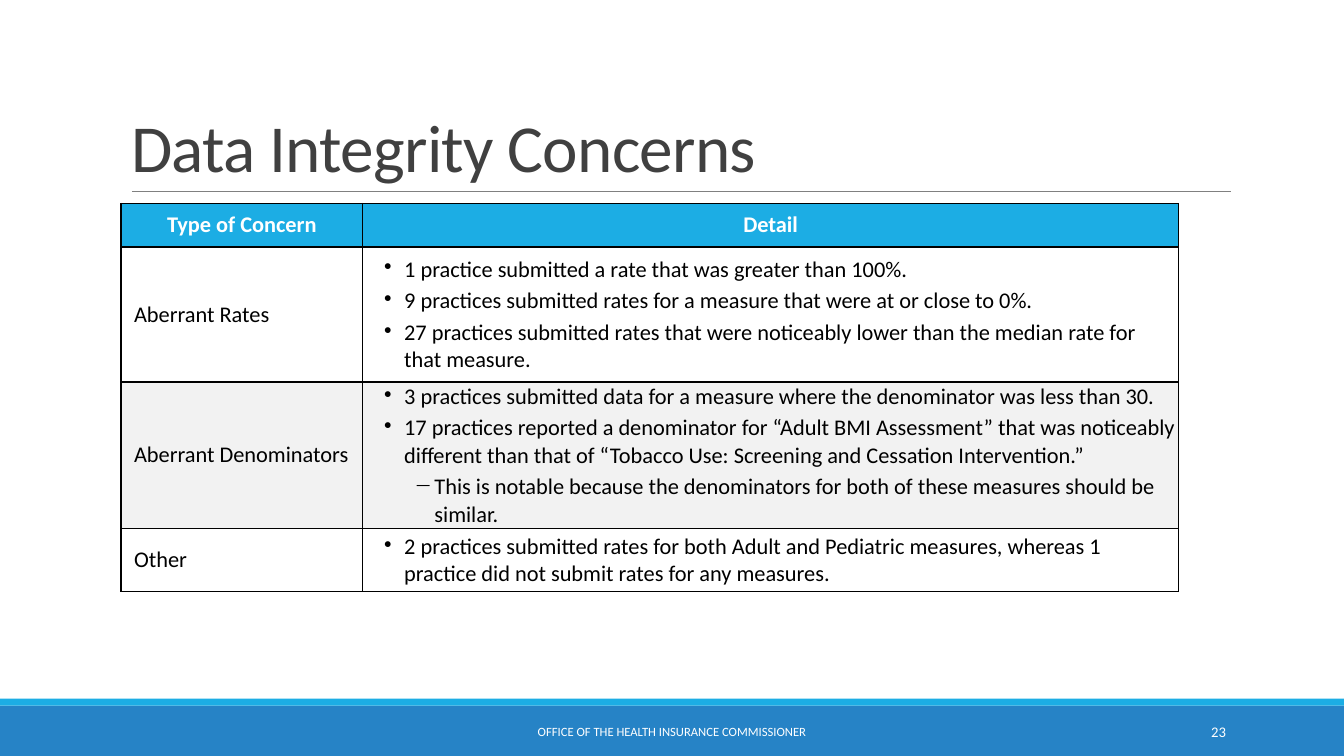
from dataclasses import dataclass

from lxml import etree
from pptx import Presentation
from pptx.dml.color import RGBColor
from pptx.enum import shapes, text
from pptx.oxml import ns
from pptx.util import Pt


@dataclass(frozen=True)
class Theme:
    font: str = "Calibri"
    heading: str = "404040"
    ink: str = "000000"
    white: str = "FFFFFF"
    stripe: str = "F2F2F2"
    accent: str = "1CADE4"
    band: str = "2683C6"
    rule: str = "808080"
    title_size: float = 48
    table_size: float = 16
    footer_size: float = 9
    number_size: float = 10.5


THEME = Theme()
LEFT, CENTER, RIGHT = text.PP_ALIGN.LEFT, text.PP_ALIGN.CENTER, text.PP_ALIGN.RIGHT
LABEL_INSETS = (9.36, 3.6, 9.36, 3.6)
DETAIL_INSETS = (0.72, 0.72, 0.72, 0)
BULLETS = ["•", "−"]
HEADERS = ["Type of Concern", "Detail"]
CONCERNS = [
    ("Aberrant Rates", THEME.white, [
        (0, "1 practice submitted a rate that was greater than 100%."),
        (0, "9 practices submitted rates for a measure that were at or close to 0%."),
        (0, "27 practices submitted rates that were noticeably lower than the median "
            "rate for that measure."),
    ]),
    ("Aberrant Denominators", THEME.stripe, [
        (0, "3 practices submitted data for a measure where the denominator was less than 30."),
        (0, "17 practices reported a denominator for “Adult BMI Assessment” that was noticeably "
            "different than that of “Tobacco Use: Screening and Cessation Intervention.”"),
        (1, "This is notable because the denominators for both of these measures should be "
            "similar."),
    ]),
    ("Other", THEME.white, [
        (0, "2 practices submitted rates for both Adult and Pediatric measures, whereas 1 "
            "practice did not submit rates for any measures."),
    ]),
]


def color(code):
    return RGBColor.from_string(code)


def write(paragraph, words, *, size, ink=THEME.ink, bold=False, align=LEFT,
          line_spacing=None, tracking=None, level=None):
    paragraph.alignment = align
    if line_spacing:
        paragraph.line_spacing = line_spacing
    run = paragraph.add_run()
    run.text = words
    run.font.name = THEME.font
    run.font.size = Pt(size)
    run.font.bold = bold
    run.font.color.rgb = color(ink)
    if tracking is not None:
        run.font._element.set("spc", str(int(tracking * 100)))
    if level is not None:
        paragraph.level = level
        paragraph.space_after = Pt(3)
        props = paragraph._p.get_or_add_pPr()
        props.set("marL", str(Pt(28.8 + 21.6 * level)))
        props.set("indent", str(Pt(-14.4)))
        etree.SubElement(props, ns.qn("a:buChar")).set("char", BULLETS[level])


def add_bar(slide, top, height, fill):
    bar = slide.shapes.add_shape(shapes.MSO_SHAPE.RECTANGLE, 0, Pt(top), Pt(960), Pt(height))
    bar.shadow.inherit = False
    bar.fill.solid()
    bar.fill.fore_color.rgb = color(fill)
    bar.line.fill.background()


def add_rule(slide, left, right, y):
    rule = slide.shapes.add_connector(
        shapes.MSO_CONNECTOR.STRAIGHT, Pt(left), Pt(y), Pt(right), Pt(y))
    rule.line.color.rgb = color(THEME.rule)
    rule.line.width = Pt(0.5)
    etree.SubElement(rule._element.spPr, ns.qn("a:effectLst"))


def set_title(slide, words):
    title = slide.shapes.title
    title.left, title.top, title.width, title.height = Pt(86.4), Pt(22.3), Pt(792), Pt(114.5)
    frame = title.text_frame
    frame.auto_size = text.MSO_AUTO_SIZE.NONE
    frame.vertical_anchor = text.MSO_ANCHOR.BOTTOM
    write(frame.paragraphs[0], words, size=THEME.title_size, ink=THEME.heading,
          line_spacing=0.85, tracking=-0.5)


def add_footer(slide, left, width, words, size, align):
    frame = slide.shapes.add_textbox(Pt(left), Pt(508.3), Pt(width), Pt(28.8)).text_frame
    frame.word_wrap = True
    frame.vertical_anchor = text.MSO_ANCHOR.MIDDLE
    write(frame.paragraphs[0], words, size=size, ink=THEME.white, align=align)


def format_cell(cell, fill, insets):
    cell.vertical_anchor = text.MSO_ANCHOR.MIDDLE
    cell.margin_left, cell.margin_top, cell.margin_right, cell.margin_bottom = map(Pt, insets)
    props = cell._tc.get_or_add_tcPr()
    for side in ("lnL", "lnR", "lnT", "lnB"):
        border = etree.SubElement(props, ns.qn(f"a:{side}"), w=str(Pt(1)))
        paint = etree.SubElement(border, ns.qn("a:solidFill"))
        etree.SubElement(paint, ns.qn("a:srgbClr"), val=THEME.ink)
    cell.fill.solid()
    cell.fill.fore_color.rgb = color(fill)


def fill_label(cell, words, fill, **style):
    format_cell(cell, fill, LABEL_INSETS)
    write(cell.text_frame.paragraphs[0], words, size=THEME.table_size, **style)


def fill_details(cell, details, fill):
    format_cell(cell, fill, DETAIL_INSETS)
    frame = cell.text_frame
    for index, (level, words) in enumerate(details):
        paragraph = frame.add_paragraph() if index else frame.paragraphs[0]
        write(paragraph, words, size=THEME.table_size, level=level)


def add_concerns(slide):
    widths, heights = (172.8, 582.5), (31, 96.5, 94.3, 45.4)
    concerns = slide.shapes.add_table(
        len(heights), len(widths), Pt(86.4), Pt(145.4),
        Pt(sum(widths)), Pt(sum(heights))).table
    concerns.horz_banding = False
    for column, width in zip(concerns.columns, widths):
        column.width = Pt(width)
    for row, height in zip(concerns.rows, heights):
        row.height = Pt(height)
    for column, header in enumerate(HEADERS):
        fill_label(concerns.cell(0, column), header, THEME.accent,
                   ink=THEME.white, bold=True, align=CENTER)
    for row, (concern, fill, details) in enumerate(CONCERNS, 1):
        fill_label(concerns.cell(row, 0), concern, fill)
        fill_details(concerns.cell(row, 1), details, fill)


def main():
    deck = Presentation()
    deck.slide_width, deck.slide_height = Pt(960), Pt(540)
    slide = deck.slides.add_slide(deck.slide_layouts.get_by_name("Title Only"))
    add_bar(slide, 504, 36, THEME.band)
    add_bar(slide, 499, 5, THEME.accent)
    add_rule(slide, 94.3, 879, 136.8)
    set_title(slide, "Data Integrity Concerns")
    add_concerns(slide)
    add_footer(slide, 290.2, 379.4, "OFFICE OF THE HEALTH INSURANCE COMMISSIONER",
               THEME.footer_size, CENTER)
    add_footer(slide, 779.8, 103, "23", THEME.number_size, RIGHT)
    deck.save("out.pptx")


if __name__ == "__main__":
    main()
